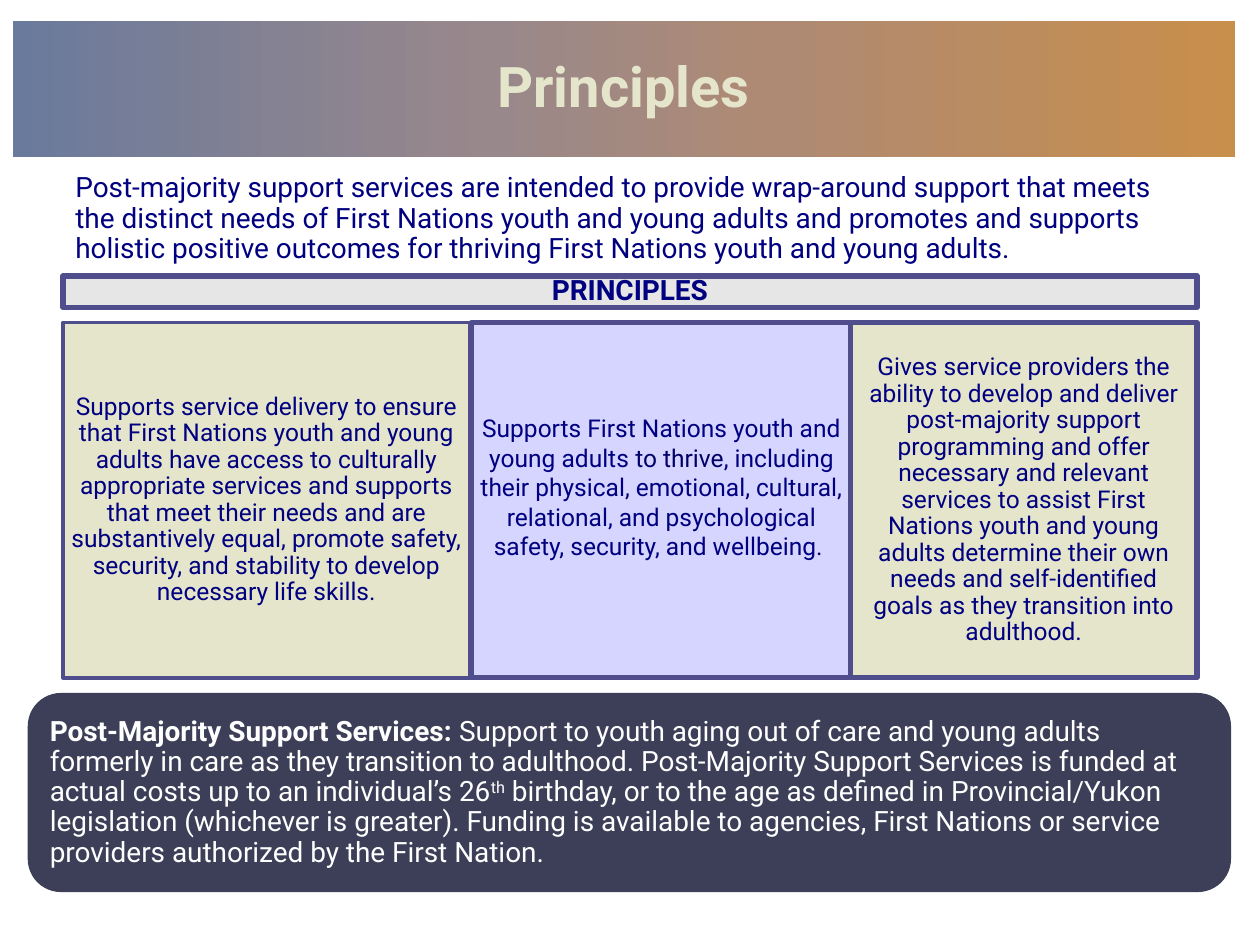
from dataclasses import dataclass
from typing import Any

from lxml import etree
from pptx import Presentation
from pptx import util as u
from pptx.dml.color import RGBColor
from pptx.enum import shapes, text
from pptx.oxml.ns import qn

COLORS = {
    "navy": "000080", "deep_navy": "000066", "border": "504D8D", "cream": "E5E5CC",
    "lilac": "D5D5FF", "grey": "E6E6E6", "slate": "3D3F58", "white": "FFFFFF",
}
BANNER_STOPS = [(0, "6A7A9C"), (39, "99888B"), (62, "AE8A74"), (100, "C88E4B")]
CENTER, LEFT = text.PP_ALIGN.CENTER, text.PP_ALIGN.LEFT
MIDDLE, TOP = text.MSO_ANCHOR.MIDDLE, text.MSO_ANCHOR.TOP


def rgb(name):
    """Return the named colour."""
    return RGBColor.from_string(COLORS[name])


@dataclass
class PrinciplesSlide:
    """Holds the style and the slide being built."""

    slide: Any
    font: str = "Roboto"

    def place(self, shape, box):
        """Move and size a shape."""
        shape.left, shape.top, shape.width, shape.height = map(u.Inches, box)

    def set_text(self, shape, runs, size, align=CENTER, anchor=MIDDLE, spacing=0.9, inset=None, bottom=None):
        """Fill one paragraph from (words, colour, options) runs."""
        frame = shape.text_frame
        frame.word_wrap = True
        frame.auto_size = text.MSO_AUTO_SIZE.NONE
        frame.vertical_anchor = anchor
        if inset is not None:
            frame.margin_left = frame.margin_right = frame.margin_top = u.Inches(inset)
            frame.margin_bottom = u.Inches(inset if bottom is None else bottom)
        paragraph = frame.paragraphs[0]
        paragraph.alignment = align
        paragraph.line_spacing = spacing
        for words, color, *options in runs:
            run = paragraph.add_run()
            run.text = words
            run.font.name = self.font
            run.font.size = u.Pt(size)
            run.font.bold = "bold" in options
            run.font.color.rgb = rgb(color)
            if "super" in options:
                run.font._element.set("baseline", "30000")
        return paragraph

    def title(self, words, box):
        """Fill the title placeholder as a gradient banner."""
        banner = self.slide.shapes.title
        self.place(banner, box)
        banner.fill.gradient()
        banner.fill.gradient_angle = 0
        stops = banner._element.spPr.find(".//" + qn("a:gsLst"))
        for stop in list(stops):
            stops.remove(stop)
        for percent, color in BANNER_STOPS:
            stop = etree.SubElement(stops, qn("a:gs"), pos=str(percent * 1000))
            etree.SubElement(stop, qn("a:srgbClr"), val=color)
        self.set_text(banner, [(words, "cream", "bold")], 32)

    def panel(self, box, fill, runs, size, line=None, kind=shapes.MSO_SHAPE.RECTANGLE, **layout):
        """Add a filled shape with text and an optional border."""
        panel = self.slide.shapes.add_shape(kind, *map(u.Inches, box))
        panel.shadow.inherit = False
        panel.fill.solid()
        panel.fill.fore_color.rgb = rgb(fill)
        if line:
            panel.line.color.rgb = rgb("border")
            panel.line.width = u.Pt(line)
        else:
            panel.line.fill.background()
        return self.set_text(panel, runs, size, **layout)

    def textbox(self, box, runs, size, **layout):
        """Add a plain text box."""
        return self.set_text(self.slide.shapes.add_textbox(*map(u.Inches, box)), runs, size, **layout)


def main():
    """Build and save the slide."""
    deck = Presentation()
    deck.slide_width, deck.slide_height = u.Inches(10), u.Inches(7.5)
    page = PrinciplesSlide(deck.slides.add_slide(deck.slide_layouts[5]))

    page.title("Principles", (0.1, 0.17, 9.7, 1.08))
    page.panel((0.5, 2.19, 9, 0.25), "grey", [("PRINCIPLES", "navy", "bold")], 16, line=3, inset=0.07)

    principles = [
        (0.5, 3.23, "cream", 2, {}, [
            ("Supports service delivery to ensure that First Nations youth and young adults have "
             "access to culturally appropriate services and supports that meet their needs and are "
             "substantively equal, promote safety, security, and stability to develop necessary "
             "life skills.", "navy")]),
        (3.74, 3.02, "lilac", 3, {"spacing": 1.0, "bottom": 0.27}, [
            ("Supports First Nations youth and young adults ", "navy"),
            ("to thrive", "deep_navy"),
            (", including their physical, emotional, cultural, relational, and psychological "
             "safety, security, and wellbeing. ", "navy")]),
        (6.75, 2.75, "cream", 3, {}, [
            ("Gives service providers the ability to develop and deliver post-majority support "
             "programming and offer necessary and relevant services to assist First Nations youth "
             "and young adults determine their own needs and self-identified goals as they "
             "transition into adulthood.", "navy")]),
    ]
    for left, width, fill, line, layout, runs in principles:
        page.panel((left, 2.56, width, 2.82), fill, runs, 14, line=line, inset=0.06, **layout)

    page.textbox((0.5, 1.33, 9, 0.83), [
        ("Post-majority support services are intended to provide wrap-around support that meets "
         "the distinct needs of First Nations youth and young adults and promotes and supports "
         "holistic positive outcomes for thriving First Nations youth and young adults.", "navy"),
    ], 16, align=LEFT, anchor=TOP)

    definition = page.panel((0.22, 5.5, 9.55, 1.58), "slate", [
        ("Post-Majority Support Services: ", "white", "bold"),
        ("Support to youth aging out of care and young adults formerly in care as they transition "
         "to adulthood. Post-Majority Support Services is funded at actual costs up to an "
         "individual’s 26", "white"),
        ("th", "white", "super"),
        (" birthday, or to the age as defined in Provincial/Yukon legislation (whichever is "
         "greater). Funding is available to agencies, First Nations or service providers "
         "authorized by the First Nation.", "white"),
    ], 16, kind=shapes.MSO_SHAPE.ROUNDED_RECTANGLE, align=LEFT)
    definition.space_before = definition.space_after = u.Pt(2)

    deck.save("out.pptx")


if __name__ == "__main__":
    main()
